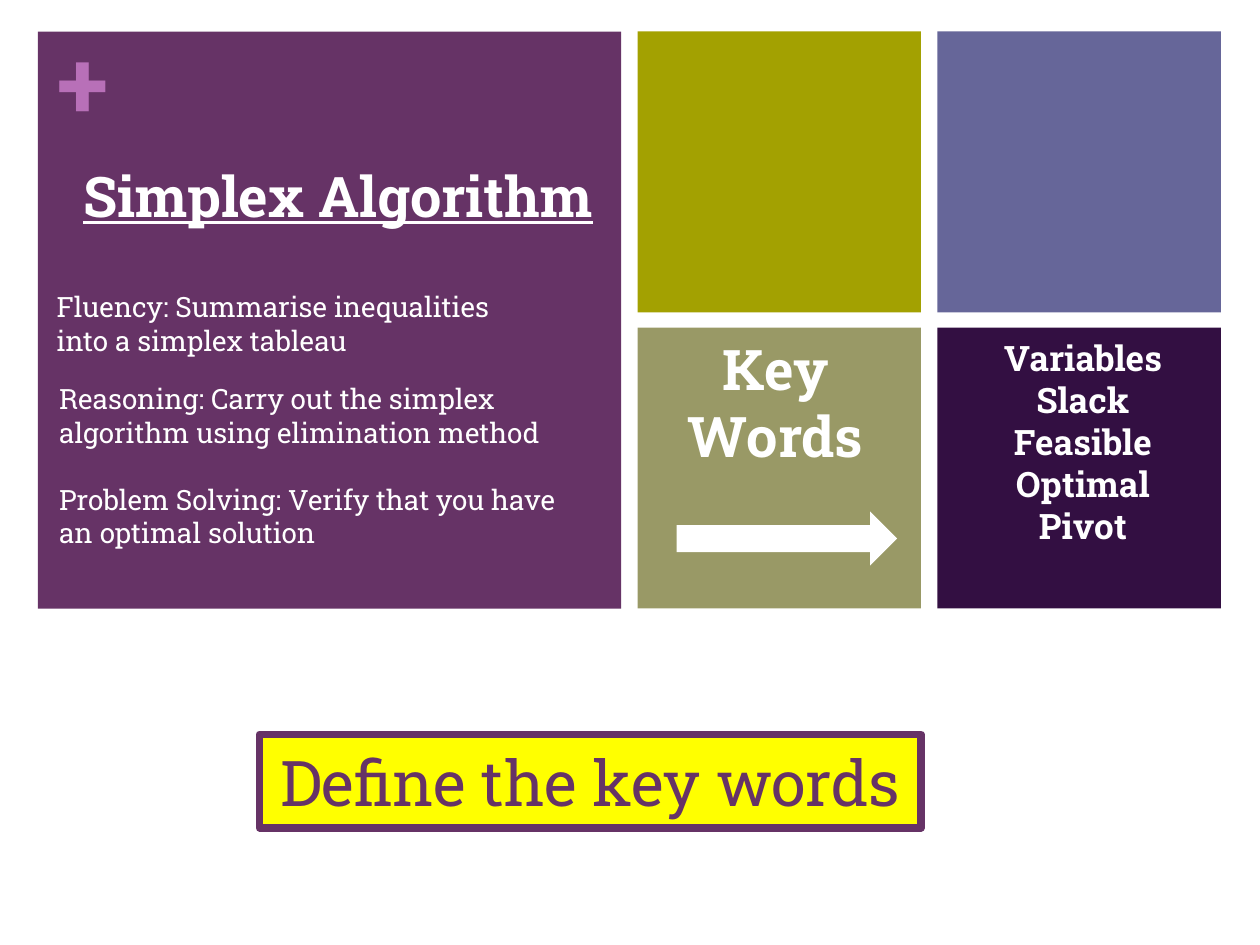
from dataclasses import dataclass

from lxml import etree
from pptx import Presentation
from pptx.dml.color import RGBColor
from pptx.enum.shapes import MSO_SHAPE
from pptx.enum.text import MSO_ANCHOR, MSO_AUTO_SIZE, PP_ALIGN
from pptx.oxml.ns import qn
from pptx.util import Inches, Pt

RECTANGLE, ARROW = MSO_SHAPE.RECTANGLE, MSO_SHAPE.RIGHT_ARROW
TOP, MIDDLE = MSO_ANCHOR.TOP, MSO_ANCHOR.MIDDLE
LEFT, CENTER = PP_ALIGN.LEFT, PP_ALIGN.CENTER
NO_AUTOFIT = MSO_AUTO_SIZE.NONE

FONT = "Roboto Slab"
WHITE, PURPLE = "FFFFFF", "663366"
GRID_LEFT, GRID_TOP = 0.3, 0.25
TILE_WIDTH, TILE_HEIGHT = 2.25, 2.23
COLUMN_STEP, ROW_STEP = 2.38, 2.35


@dataclass
class Area:
    """A rectangle on the slide, in inches."""
    left: float
    top: float
    width: float
    height: float


@dataclass
class Tile:
    column: int
    row: int
    color: str
    span: int = 1


@dataclass
class TextStyle:
    size: int
    color: str = WHITE
    bold: bool = False
    underline: bool = False
    align: PP_ALIGN = LEFT
    anchor: MSO_ANCHOR = MIDDLE


TILES = [
    Tile(0, 0, PURPLE, span=2),
    Tile(3, 0, "666699"),
    Tile(2, 1, "999966"),
    Tile(2, 0, "A3A101"),
    Tile(3, 1, "330F42"),
]
OBJECTIVES = [
    (Area(0.35, 2.08, 3.98, 0.97), "Fluency: Summarise inequalities into a simplex tableau"),
    (Area(0.37, 2.81, 4.31, 0.97), "Reasoning: Carry out the simplex algorithm using elimination method"),
    (Area(0.37, 3.61, 4.31, 0.97), "Problem Solving: Verify that you have an optimal solution"),
]
KEY_WORDS = ["Variables", "Slack", "Feasible", "Optimal", "Pivot"]


def rgb(color: str) -> RGBColor:
    return RGBColor.from_string(color)


def tile_area(tile: Tile) -> Area:
    extra = tile.span - 1
    return Area(
        GRID_LEFT + tile.column * COLUMN_STEP,
        GRID_TOP + tile.row * ROW_STEP,
        TILE_WIDTH + extra * COLUMN_STEP,
        TILE_HEIGHT + extra * ROW_STEP,
    )


def inches(area: Area) -> list:
    return [Inches(value) for value in (area.left, area.top, area.width, area.height)]


def add_filled(slide, kind: MSO_SHAPE, area: Area, color: str):
    shape = slide.shapes.add_shape(kind, *inches(area))
    shape.shadow.inherit = False
    shape.fill.solid()
    shape.fill.fore_color.rgb = rgb(color)
    shape.line.fill.background()
    return shape


def write(shape, lines: list[str], style: TextStyle) -> None:
    frame = shape.text_frame
    frame.word_wrap = True
    frame.auto_size = NO_AUTOFIT
    frame.vertical_anchor = style.anchor
    for index, line in enumerate(lines):
        para = frame.add_paragraph() if index else frame.paragraphs[0]
        para.alignment = style.align
        para.space_before = Pt(0)
        span = para.add_run()
        span.text = line
        font = span.font
        font.name, font.size, font.color.rgb = FONT, Pt(style.size), rgb(style.color)
        font.bold, font.underline = style.bold, style.underline


def add_text(slide, area: Area, text: str, style: TextStyle):
    box = slide.shapes.add_textbox(*inches(area))
    write(box, [text], style)
    return box


def fill_placeholder(holder, area: Area, lines: list[str], style: TextStyle) -> None:
    """Move the placeholder to the area, in front of the tiles, and write in it."""
    holder.left, holder.top, holder.width, holder.height = inches(area)
    holder.element.getparent().append(holder.element)
    write(holder, lines, style)


def remove_bullets(shape) -> None:
    for para in shape.text_frame.paragraphs:
        properties = para._p.get_or_add_pPr()
        properties.set("marL", "0")
        properties.set("indent", "0")
        etree.SubElement(properties, qn("a:buNone"))


def main() -> None:
    deck = Presentation()
    deck.slide_width, deck.slide_height = Inches(10), Inches(7.5)
    slide = deck.slides.add_slide(deck.slide_layouts[1])
    title, key_word_list = slide.placeholders

    for tile in TILES:
        add_filled(slide, RECTANGLE, tile_area(tile), tile.color)

    plus = add_text(slide, Area(0.46, 0.19, 0.45, 0.91), "+",
                    TextStyle(54, "B870B8", bold=True, anchor=TOP))
    frame = plus.text_frame
    frame.margin_left = frame.margin_top = frame.margin_right = frame.margin_bottom = 0

    heading = TextStyle(32, bold=True, align=CENTER)
    add_text(slide, Area(5.19, 1.9, 1.93, 2.58), "Key Words", heading)
    fill_placeholder(title, Area(0.51, 0.74, 4.35, 1.61), ["Simplex Algorithm"],
                     TextStyle(32, bold=True, underline=True, align=CENTER))
    add_filled(slide, ARROW, Area(5.37, 4.06, 1.75, 0.43), WHITE)
    fill_placeholder(key_word_list, Area(7.63, 2.38, 1.93, 2.25), KEY_WORDS,
                     TextStyle(20, bold=True, align=CENTER))
    remove_bullets(key_word_list)

    for area, text in OBJECTIVES:
        add_text(slide, area, text, TextStyle(16))

    banner = add_filled(slide, RECTANGLE, Area(2.06, 5.83, 5.25, 0.74), "FFFF00")
    banner.line.color.rgb = rgb(PURPLE)
    banner.line.width = Pt(4.5)
    write(banner, ["Define the key words"], TextStyle(36, PURPLE, align=CENTER))

    deck.save("out.pptx")


if __name__ == "__main__":
    main()
